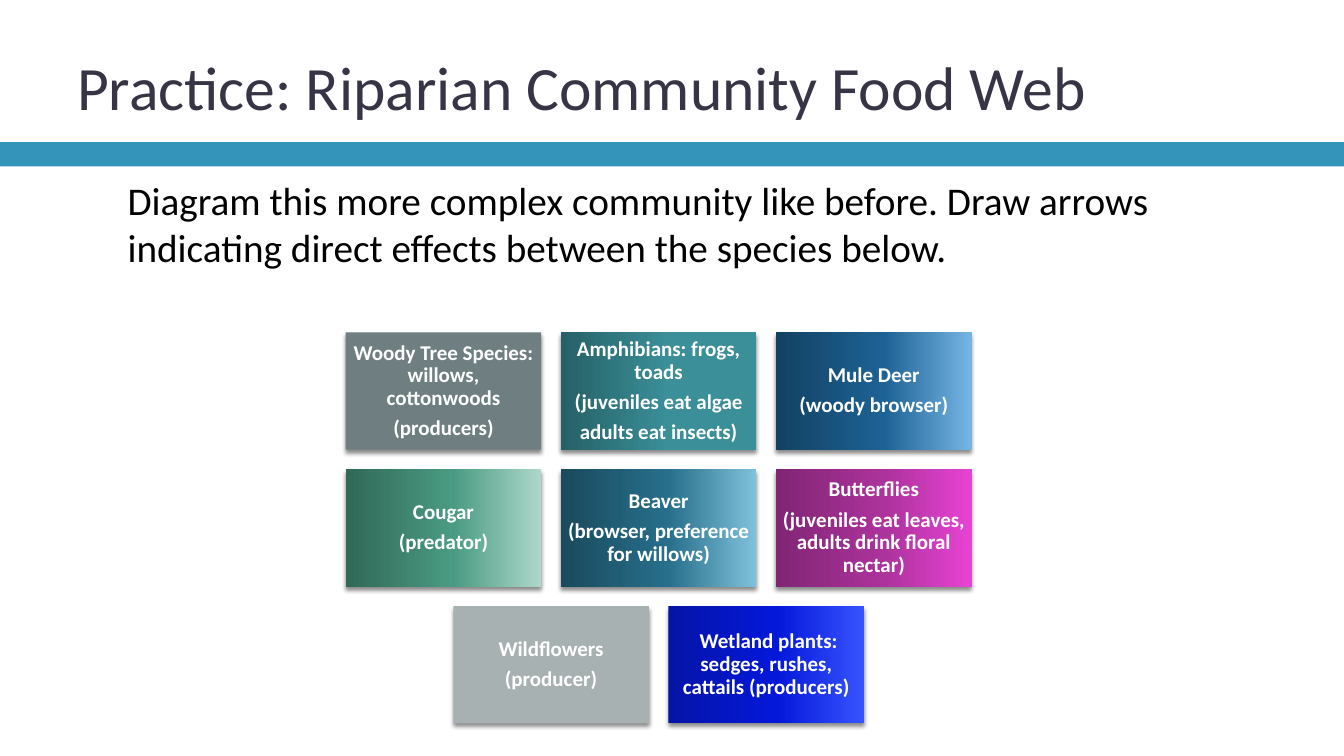
from pptx import Presentation
from pptx import oxml as x
from pptx import util as u
from pptx.dml import color as c
from pptx.enum import shapes, text
from pptx.oxml import ns

SLIDE_W, SLIDE_H = 960, 540
BOX_W, BOX_H, GAP = 139.7, 83.8, 14
GRID_CENTER, GRID_TOP = 470.5, 237.4
MARGINS = ("margin_left", "margin_top", "margin_right", "margin_bottom")

ROWS = [
    [
        (["Woody Tree Species: willows, cottonwoods", "(producers)"], ["6F7F81"]),
        (["Amphibians: frogs, toads", "(juveniles eat algae", "adults eat insects)"],
         ["266066", "3A8F98", "3A8F98"]),
        (["Mule Deer", "(woody browser)"], ["134163", "1D6294", "75B6E5"]),
    ],
    [
        (["Cougar", "(predator)"], ["316857", "4A9B83", "ACD7CA"]),
        (["Beaver", "(browser, preference for willows)"], ["1A4A5D", "276F8B", "7FC1DB"]),
        (["Butterflies", "(juveniles eat leaves, adults drink floral nectar)"],
         ["802574", "AC329C", "E643D2"]),
    ],
    [
        (["Wildflowers", "(producer)"], ["A8B1B2"]),
        ([" Wetland plants: sedges, rushes, cattails (producers)"],
         ["0514A6", "0418DA", "3753FE"]),
    ],
]


def rgb(value):
    return c.RGBColor.from_string(value)


def apply(obj, values):
    for name, value in values.items():
        setattr(obj, name, value)


class FoodWebSlide:
    """Draws the bar, text and species boxes of one slide in a shared style."""

    font = {"name": "Calibri"}
    box_font = {"size": u.Pt(15), "bold": True}
    box_par = {"alignment": text.PP_ALIGN.CENTER, "line_spacing": 0.9,
               "space_after": u.Pt(5.25)}
    box_frame = {"word_wrap": True, "vertical_anchor": text.MSO_ANCHOR.MIDDLE,
                 **dict.fromkeys(MARGINS, u.Pt(4.2))}

    def __init__(self, prs):
        self.s = prs.slides.add_slide(prs.slide_layouts[6])

    def add_lines(self, tf, lines, color, font, par):
        for i, line in enumerate(lines):
            p = tf.paragraphs[0] if i == 0 else tf.add_paragraph()
            apply(p, par)
            r = p.add_run()
            r.text = line
            apply(r.font, {**self.font, **font})
            r.font.color.rgb = rgb(color)

    def label(self, at, line, size, color, frame):
        tf = self.s.shapes.add_textbox(*map(u.Pt, at)).text_frame
        apply(tf, {"word_wrap": True, **frame})
        self.add_lines(tf, [line], color, {"size": u.Pt(size)}, {})

    def rect(self, at, colors):
        sp = self.s.shapes.add_shape(shapes.MSO_SHAPE.RECTANGLE, *map(u.Pt, at))
        sp.shadow.inherit = False
        sp.line.fill.background()
        if len(colors) == 1:
            sp.fill.solid()
            sp.fill.fore_color.rgb = rgb(colors[0])
        else:
            self.gradient(sp, colors)
        return sp

    def gradient(self, sp, colors):
        sp.fill.gradient()
        sp.fill.gradient_angle = 0
        stops = sp._element.spPr.find(".//" + ns.qn("a:gsLst"))
        for gs in list(stops):
            stops.remove(gs)
        for pos, color in zip((0, 55, 100), colors):
            stops.append(x.parse_xml(
                f'<a:gs {ns.nsdecls("a")} pos="{pos * 1000}">'
                f'<a:srgbClr val="{color}"/></a:gs>'))

    def shadow(self, sp):
        sp._element.spPr.find(ns.qn("a:effectLst")).append(x.parse_xml(
            f'<a:outerShdw {ns.nsdecls("a")} blurRad="{u.Pt(3)}" dist="{u.Pt(2.4)}" '
            'dir="5400000" rotWithShape="0"><a:srgbClr val="000000">'
            '<a:alpha val="45000"/></a:srgbClr></a:outerShdw>'))

    def species(self, left, top, lines, colors):
        sp = self.rect((left, top, BOX_W, BOX_H), colors)
        self.shadow(sp)
        apply(sp.text_frame, self.box_frame)
        self.add_lines(sp.text_frame, lines, "FFFFFF", self.box_font, self.box_par)


def main():
    prs = Presentation()
    apply(prs, {"slide_width": u.Pt(SLIDE_W), "slide_height": u.Pt(SLIDE_H)})
    web = FoodWebSlide(prs)
    web.rect((0, 101.6, SLIDE_W, 17.2), ["3494BA"])
    web.label((48, 12.2, 864, 98.6), "Practice: Riparian Community Food Web", 44,
              "373545", {"vertical_anchor": text.MSO_ANCHOR.MIDDLE})
    web.label((48, 122.4, 789, 75),
              "Diagram this more complex community like before. Draw arrows "
              "indicating direct effects between the species below.", 28,
              "000000", {"margin_left": u.Pt(43.2)})
    for i, row in enumerate(ROWS):
        left = GRID_CENTER - (len(row) * (BOX_W + GAP) - GAP) / 2
        for j, (lines, colors) in enumerate(row):
            web.species(left + j * (BOX_W + GAP), GRID_TOP + i * (BOX_H + GAP),
                        lines, colors)
    prs.save("out.pptx")


if __name__ == "__main__":
    main()
